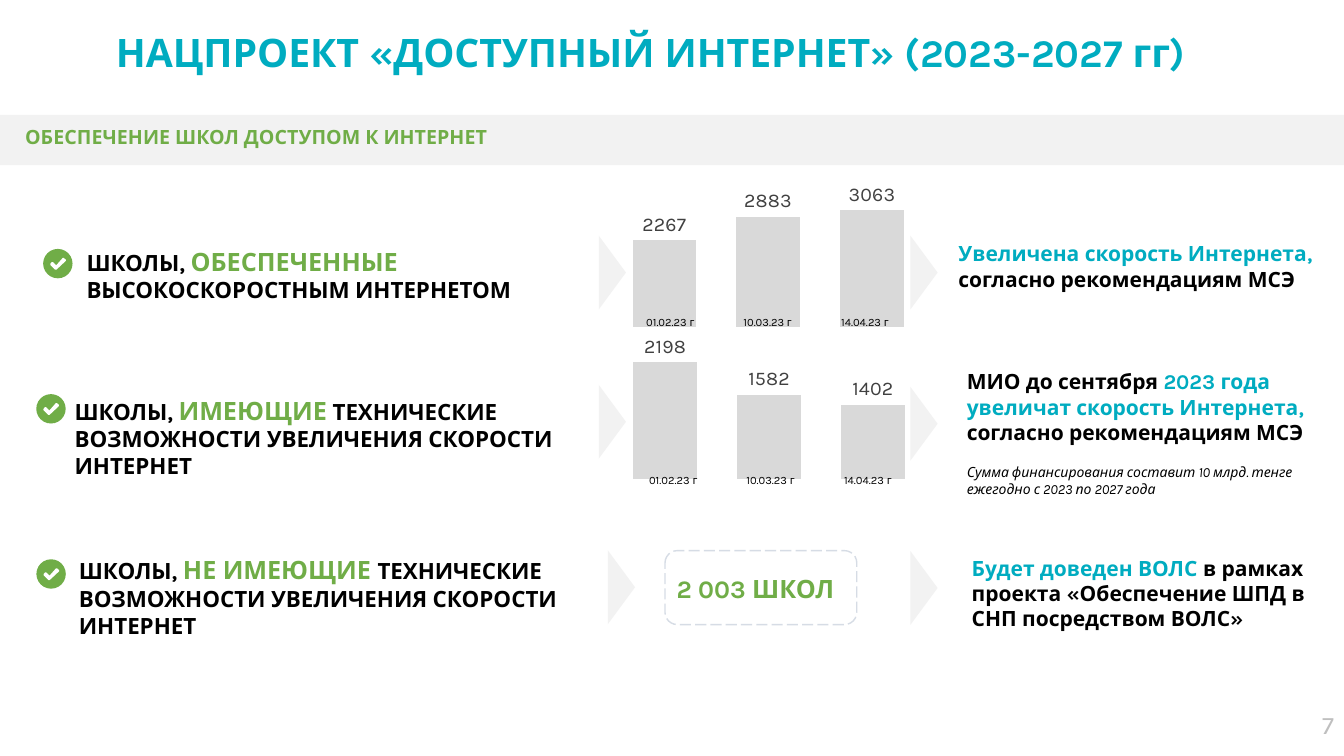
from typing import NamedTuple

from lxml.etree import SubElement
from pptx import Presentation
from pptx.chart.data import CategoryChartData
from pptx.dml.color import RGBColor
from pptx.enum.chart import XL_CHART_TYPE, XL_LABEL_POSITION
from pptx.enum.dml import MSO_LINE
from pptx.enum.shapes import MSO_SHAPE
from pptx.enum.text import MSO_ANCHOR, MSO_AUTO_SIZE, PP_ALIGN
from pptx.oxml.ns import qn
from pptx.util import Pt

FONT = "Karla"
TEAL, GREEN, BLACK, WHITE = "00ACC0", "70AD47", "000000", "FFFFFF"
PALE, GREY, DASH = "F2F2F2", "BFBFBF", "D6DCE5"
BAR, LABEL = "D9D9D9", "404040"
DATES = ("01.02.23 г", "10.03.23 г", "14.04.23 г")
DATE_PITCH = 69.5
BADGE_SIZE = 21
CHECK_MARK = [(16.2, 8.6), (10.8, 13.7), (9.4, 14.9), (8.6, 14.9), (5.2, 11.5), (5.2, 10.6),
              (6.2, 9.4), (7, 9.4), (9.4, 11.7), (14, 6.5), (14.8, 6.5), (16.2, 7.7)]


class Box(NamedTuple):
    """A rectangle in points."""
    left: float
    top: float
    width: float
    height: float

    def inner(self, left, top, width, height):
        """Return a box offset from this one."""
        return Box(self.left + left, self.top + top, width, height)

    def lengths(self):
        """Return the four lengths as Pt values."""
        return [Pt(value) for value in self]


def color(value):
    """Turn a hex string into a colour."""
    return RGBColor.from_string(value)


def fill_plain(shape, value):
    """Give a shape a flat fill without line or shadow."""
    shape.shadow.inherit = False
    shape.fill.solid()
    shape.fill.fore_color.rgb = color(value)
    shape.line.fill.background()


def write_runs(text_frame, runs, bold=False, italic=False, align=PP_ALIGN.LEFT):
    """Write runs of (text, size, colour) in one wrapped paragraph."""
    text_frame.word_wrap = True
    text_frame.auto_size = MSO_AUTO_SIZE.NONE
    text_frame.vertical_anchor = MSO_ANCHOR.TOP
    paragraph = text_frame.paragraphs[0]
    paragraph.alignment = align
    for text, size, value in runs:
        run = paragraph.add_run()
        run.text = text
        run.font.name = FONT
        run.font.size = Pt(size)
        run.font.bold = bold
        run.font.italic = italic
        run.font.color.rgb = color(value)


def add_text(slide, box, runs, inset=None, **style):
    """Add a text box, with an equal inset on all sides if one is given."""
    text_frame = slide.shapes.add_textbox(*box.lengths()).text_frame
    if inset is not None:
        text_frame.margin_left = text_frame.margin_right = Pt(inset)
        text_frame.margin_top = text_frame.margin_bottom = Pt(inset)
    write_runs(text_frame, runs, **style)


def add_title(slide, box, text):
    """Place the title placeholder."""
    title = slide.shapes.title
    title.left, title.top, title.width, title.height = box.lengths()
    write_runs(title.text_frame, [(text, 28, TEAL)], bold=True)


def add_section_band(slide, box, text):
    """Add the grey band with its heading."""
    band = slide.shapes.add_shape(MSO_SHAPE.RECTANGLE, *box.lengths())
    fill_plain(band, PALE)
    add_text(slide, box.inner(10.8, 3.6, 915, 24.5), [(text, 14, GREEN)], bold=True)


def add_badge(slide, box):
    """Add a round badge with a check mark."""
    group = slide.shapes.add_group_shape()
    circle = group.shapes.add_shape(MSO_SHAPE.OVAL, *box.lengths())
    fill_plain(circle, GREEN)
    points = [(Pt(box.left + x), Pt(box.top + y)) for x, y in CHECK_MARK]
    builder = group.shapes.build_freeform(*points[0])
    builder.add_line_segments(points[1:])
    fill_plain(builder.convert_to_shape(), WHITE)


def add_statement(slide, box, badge_offset, accent, ending):
    """Add a group of schools with its badge on the left."""
    add_badge(slide, box.inner(*badge_offset, BADGE_SIZE, BADGE_SIZE))
    runs = [("ШКОЛЫ, ", 16, BLACK), (accent, 18, GREEN), (ending, 16, BLACK)]
    add_text(slide, box, runs, inset=2.9, bold=True)


def add_arrow(slide, center_x, center_y):
    """Add a triangle pointing right around a centre."""
    width, height = 52.6, 19.4
    box = Box(center_x - width / 2, center_y - height / 2, width, height)
    arrow = slide.shapes.add_shape(MSO_SHAPE.ISOSCELES_TRIANGLE, *box.lengths())
    arrow.rotation = 90
    fill_plain(arrow, PALE)


def set_plot_layout(chart, **fractions):
    """Fix the inner plot area as fractions of the chart."""
    plot_area = chart.element.find(".//" + qn("c:plotArea"))
    for layout in plot_area.findall(qn("c:layout")):
        plot_area.remove(layout)
    layout = SubElement(plot_area, qn("c:layout"))
    plot_area.insert(0, layout)
    manual = SubElement(layout, qn("c:manualLayout"))
    settings = {"layoutTarget": "inner", "xMode": "edge", "yMode": "edge", **fractions}
    for name, value in settings.items():
        SubElement(manual, qn("c:" + name)).set("val", str(value))


def add_school_chart(slide, box, values, maximum, date_offset):
    """Add a column chart with dates under the columns."""
    data = CategoryChartData()
    data.categories = ["1", "2", "3"]
    data.add_series("Series 1", values)
    chart = slide.shapes.add_chart(XL_CHART_TYPE.COLUMN_CLUSTERED, *box.lengths(), data).chart
    chart.has_title = chart.has_legend = False
    chart.font.name, chart.font.size = "Calibri", Pt(10)
    chart.font.color.rgb = color(BLACK)
    for axis in (chart.category_axis, chart.value_axis):
        axis.has_major_gridlines = False
        axis.visible = False
    chart.value_axis.minimum_scale, chart.value_axis.maximum_scale = 0, maximum
    plot = chart.plots[0]
    plot.gap_width, plot.overlap, plot.vary_by_categories = 64, 15, False
    series_fill = plot.series[0].format.fill
    series_fill.solid()
    series_fill.fore_color.rgb = color(BAR)
    plot.has_data_labels = True
    labels = plot.data_labels
    labels.show_value, labels.position = True, XL_LABEL_POSITION.OUTSIDE_END
    labels.font.name, labels.font.size = FONT, Pt(14)
    labels.font.color.rgb = color(LABEL)
    set_plot_layout(chart, x=0.02, y=0.06, w=0.96, h=0.92)
    left, top = date_offset
    for index, date in enumerate(DATES):
        date_box = box.inner(left + index * DATE_PITCH, top, 59, 17)
        add_text(slide, date_box, [(date, 8, BLACK)], align=PP_ALIGN.CENTER)


def add_school_count(slide, box, text):
    """Add the dashed frame with the number of schools."""
    frame = slide.shapes.add_shape(MSO_SHAPE.ROUNDED_RECTANGLE, *box.lengths())
    frame.shadow.inherit = False
    frame.fill.background()
    frame.line.color.rgb = color(DASH)
    frame.line.width = Pt(1)
    frame.line.dash_style = MSO_LINE.LONG_DASH
    add_text(slide, box.inner(1.2, 13, 190, 50), [(text, 18, GREEN)], bold=True)


def add_outcome(slide, box, *runs):
    """Add the outcome on the right from (text, colour) pairs."""
    add_text(slide, box, [(text, 15, value) for text, value in runs], bold=True)


def main():
    """Build and save the slide."""
    presentation = Presentation()
    presentation.slide_width, presentation.slide_height = Pt(960), Pt(540)
    slide = presentation.slides.add_slide(presentation.slide_layouts[5])
    add_title(slide, Box(75.6, 16.6, 880, 41), "НАЦПРОЕКТ «ДОСТУПНЫЙ ИНТЕРНЕТ» (2023-2027 гг)")
    add_section_band(slide, Box(0, 82, 960, 36), "ОБЕСПЕЧЕНИЕ ШКОЛ ДОСТУПОМ К ИНТЕРНЕТ")

    technical = "ТЕХНИЧЕСКИЕ ВОЗМОЖНОСТИ УВЕЛИЧЕНИЯ СКОРОСТИ ИНТЕРНЕТ"
    add_statement(slide, Box(59, 173, 357, 47), (-28.2, 4.8), "ОБЕСПЕЧЕННЫЕ", " ВЫСОКОСКОРОСТНЫМ ИНТЕРНЕТОМ")
    add_statement(slide, Box(50.4, 279.4, 398, 81), (-24.5, 2.1), "ИМЕЮЩИЕ", " " + technical)
    add_statement(slide, Box(53.5, 393.3, 398, 81), (-27.5, 6.2), "НЕ ИМЕЮЩИЕ ", technical)

    for center in ((437.4, 194.7), (437.4, 301.3), (443.9, 419.5),
                   (660, 194.7), (660, 302.7), (660, 420)):
        add_arrow(slide, *center)

    add_school_chart(slide, Box(433.4, 239.8, 232, 104.4), (2198, 1582, 1402), 2500, (18, 95))
    add_school_chart(slide, Box(432.7, 131, 232, 104.4), (2267, 2883, 3063), 3500, (16.6, 90.8))
    add_school_count(slide, Box(475, 393.3, 137, 52.8), "2 003 ШКОЛ")

    add_outcome(slide, Box(677.5, 168.5, 273, 62), ("Увеличена скорость Интернета, ", TEAL),
                ("согласно рекомендациям МСЭ", BLACK))
    add_outcome(slide, Box(683.5, 260, 273, 80), ("МИО до сентября ", BLACK),
                ("2023 года увеличат скорость Интернета, ", TEAL), ("согласно рекомендациям МСЭ", BLACK))
    add_outcome(slide, Box(687, 393.3, 253.5, 98), ("Будет доведен ВОЛС ", TEAL),
                ("в рамках проекта «Обеспечение ШПД в СНП посредством ВОЛС»", BLACK))
    note = "Сумма финансирования составит 10 млрд. тенге ежегодно с 2023 по 2027 года"
    add_text(slide, Box(683.5, 327.6, 275, 32), [(note, 10, BLACK)], italic=True)
    add_text(slide, Box(926.5, 503.3, 33.5, 29), [("7", 18, GREY)], align=PP_ALIGN.RIGHT)
    presentation.save("out.pptx")


if __name__ == "__main__":
    main()
